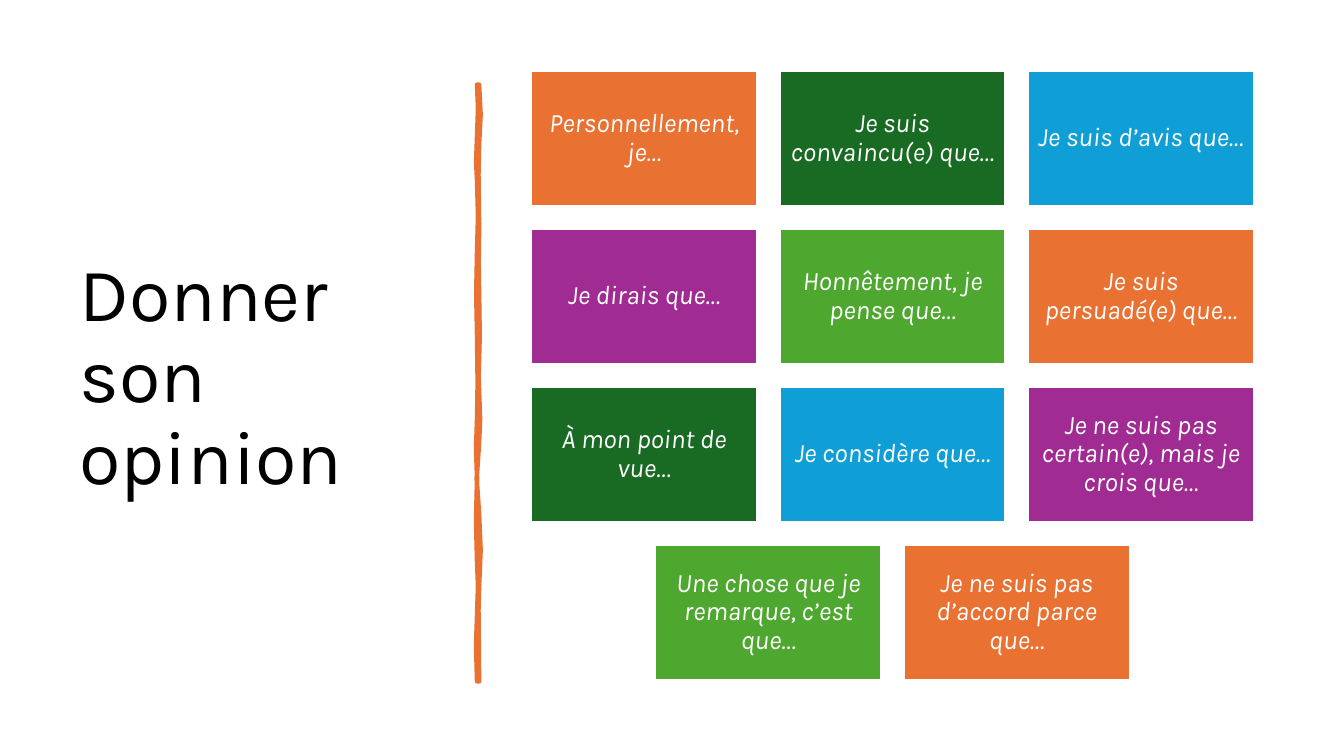
from dataclasses import dataclass

from pptx import Presentation
from pptx.dml.color import RGBColor
from pptx.enum.shapes import MSO_SHAPE as Preset
from pptx.enum.text import MSO_ANCHOR as Anchor, PP_ALIGN as Align
from pptx.slide import Slide
from pptx.util import Emu, Inches, Pt

SLIDE_WIDTH, SLIDE_HEIGHT = Inches(13.33), Inches(7.5)


@dataclass(frozen=True)
class Theme:
    font: str = "Karla"
    title_size: Pt = Pt(54)
    phrase_size: Pt = Pt(19)
    stroke_width: Pt = Pt(3.25)
    border_width: Pt = Pt(1.5)
    line_spacing: float = 0.9
    ink: RGBColor = RGBColor(0x00, 0x00, 0x00)
    paper: RGBColor = RGBColor(0xFF, 0xFF, 0xFF)
    orange: RGBColor = RGBColor(0xE9, 0x71, 0x32)
    forest: RGBColor = RGBColor(0x19, 0x6B, 0x24)
    blue: RGBColor = RGBColor(0x0F, 0x9E, 0xD5)
    purple: RGBColor = RGBColor(0xA0, 0x2B, 0x93)
    green: RGBColor = RGBColor(0x4E, 0xA7, 0x2E)


@dataclass(frozen=True)
class Bend:
    down: float
    sway: float


THEME = Theme()
TILE_COLORS = (THEME.orange, THEME.forest, THEME.blue, THEME.purple, THEME.green)
COLUMNS = 3
PHRASES = (
    "Personnellement, je…",
    "Je suis convaincu(e) que…",
    "Je suis d’avis que…",
    "Je dirais que…",
    "Honnêtement, je pense que…",
    "Je suis persuadé(e) que…",
    "À mon point de vue…",
    "Je considère que…",
    "Je ne suis pas certain(e), mais je crois que…",
    "Une chose que je remarque, c’est que…",
    "Je ne suis pas d’accord parce que…",
)
RIGHT_EDGE = (
    Bend(0, 0), Bend(0.05, 0.75), Bend(0.1, 0), Bend(0.15, -0.3), Bend(0.24, 0),
    Bend(0.3, -0.2), Bend(0.35, 0), Bend(0.42, 0.3), Bend(0.46, 0),
    Bend(0.49, -0.25), Bend(0.56, 0.5), Bend(0.6, 0), Bend(0.66, -1.2),
    Bend(0.72, 0), Bend(0.78, 0.75), Bend(0.84, 0), Bend(0.88, -0.3), Bend(1, 0),
)
LEFT_EDGE = (
    Bend(0, 0), Bend(0.04, 0.5), Bend(0.13, -0.45), Bend(0.16, 0), Bend(0.22, 0.5),
    Bend(0.28, 0), Bend(0.35, -0.4), Bend(0.42, 0), Bend(0.5, 0.3), Bend(0.56, 0),
    Bend(0.61, -0.5), Bend(0.66, 0), Bend(0.73, -0.5), Bend(0.8, 0),
    Bend(0.84, 0.5), Bend(0.89, 0), Bend(0.94, -0.5), Bend(1, 0),
)


def across(percent: float) -> Emu:
    return Emu(round(SLIDE_WIDTH * percent / 100))


def down(percent: float) -> Emu:
    return Emu(round(SLIDE_HEIGHT * percent / 100))


def write(frame, text: str, size: Pt, color: RGBColor, align: Align) -> None:
    frame.word_wrap = True
    frame.vertical_anchor = Anchor.MIDDLE
    paragraph = frame.paragraphs[0]
    paragraph.text = text
    paragraph.alignment = align
    paragraph.line_spacing = THEME.line_spacing
    paragraph.font.name = THEME.font
    paragraph.font.size = size
    paragraph.font.color.rgb = color
    paragraph.font.italic = size == THEME.phrase_size


def draw_title(slide: Slide) -> None:
    title = slide.shapes.add_textbox(across(5.18), down(9.33), across(28.06), down(81.47))
    write(title.text_frame, "Donner son opinion", THEME.title_size, THEME.ink, Align.LEFT)


def draw_brush_stroke(slide: Slide) -> None:
    left, top = across(35.5), down(11.2)
    width, height = across(0.15), down(78.93)

    def trace(edge: tuple[Bend, ...], start: int) -> list[tuple[float, float]]:
        return [(start + bend.sway * width, top + bend.down * height) for bend in edge]

    outline = trace(RIGHT_EDGE, left + width) + trace(LEFT_EDGE, left)[::-1]
    builder = slide.shapes.build_freeform(*outline[0])
    builder.add_line_segments(outline[1:], close=True)
    stroke = builder.convert_to_shape()
    stroke.shadow.inherit = False
    stroke.fill.solid()
    stroke.fill.fore_color.rgb = THEME.orange
    stroke.line.color.rgb = THEME.orange
    stroke.line.width = THEME.stroke_width


def draw_phrases(slide: Slide) -> None:
    left, top, width = across(39.53), down(9.33), across(16.8)
    height, gap = Emu(round(width * 0.6)), Emu(round(width * 0.1))
    for index, phrase in enumerate(PHRASES):
        row, column = divmod(index, COLUMNS)
        in_row = min(COLUMNS, len(PHRASES) - row * COLUMNS)
        column += (COLUMNS - in_row) / 2
        tile = slide.shapes.add_shape(
            Preset.RECTANGLE,
            Emu(round(left + column * (width + gap))),
            Emu(top + row * (height + gap)),
            width,
            height,
        )
        tile.shadow.inherit = False
        tile.fill.solid()
        tile.fill.fore_color.rgb = TILE_COLORS[index % len(TILE_COLORS)]
        tile.line.color.rgb = THEME.paper
        tile.line.width = THEME.border_width
        frame = tile.text_frame
        frame.margin_left = frame.margin_right = Inches(0.08)
        frame.margin_top = frame.margin_bottom = Inches(0.08)
        write(frame, phrase, THEME.phrase_size, THEME.paper, Align.CENTER)


def main() -> None:
    deck = Presentation()
    deck.slide_width, deck.slide_height = SLIDE_WIDTH, SLIDE_HEIGHT
    slide = deck.slides.add_slide(deck.slide_layouts[6])
    draw_title(slide)
    draw_brush_stroke(slide)
    draw_phrases(slide)
    deck.save("out.pptx")


if __name__ == "__main__":
    main()
